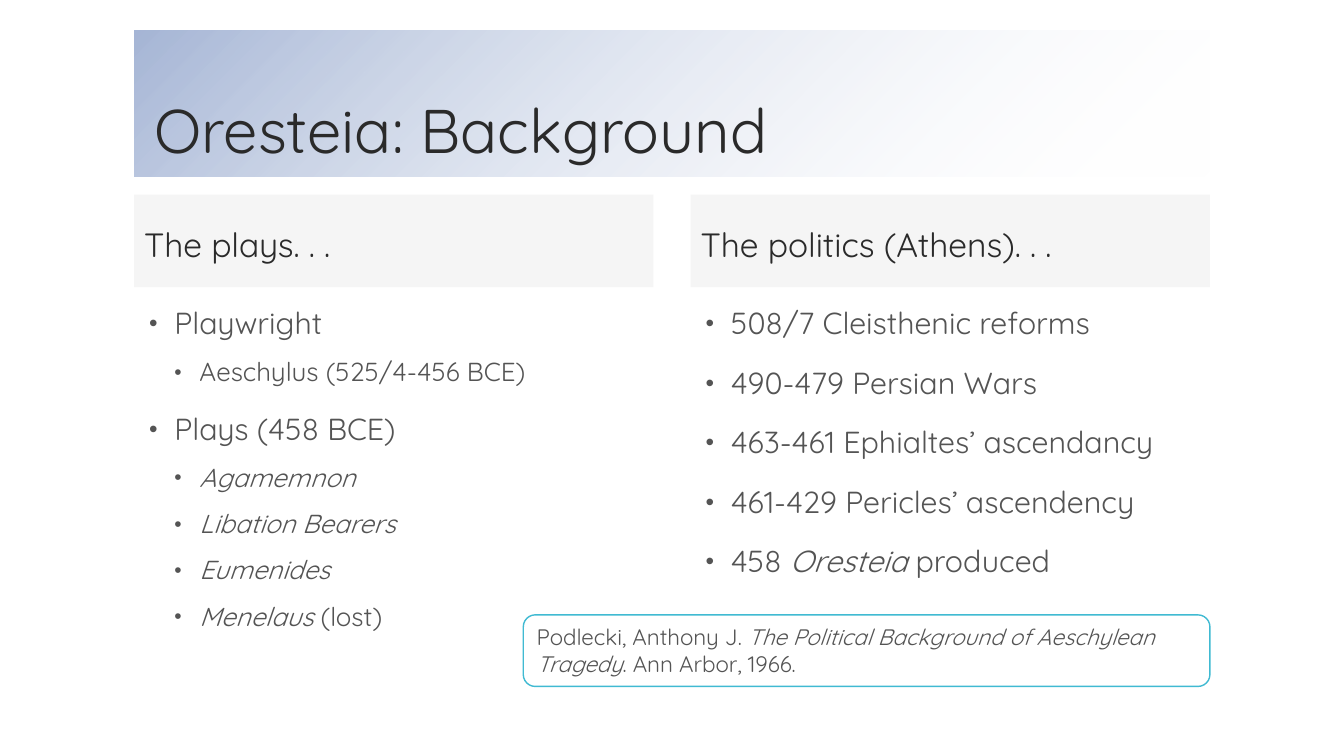
from dataclasses import dataclass
from typing import Any

import lxml.etree
import pptx
import pptx.dml.color
import pptx.enum.shapes
import pptx.enum.text
import pptx.oxml.ns
import pptx.util

Inches = pptx.util.Inches
Pt = pptx.util.Pt
RGBColor = pptx.dml.color.RGBColor
Anchor = pptx.enum.text.MSO_ANCHOR
ShapeKind = pptx.enum.shapes.MSO_SHAPE

BLUE = RGBColor(0xA6, 0xB6, 0xD6)
WHITE = RGBColor(0xFF, 0xFF, 0xFF)
GREY = RGBColor(0xBF, 0xBF, 0xBF)
TEAL = RGBColor(0x40, 0xBA, 0xD2)
DARK = RGBColor(0x2A, 0x2A, 0x2A)
BODY = RGBColor(0x54, 0x54, 0x54)

FONT = "Quicksand"
LEFT, WIDTH = 1.33, 10.67
COLUMN_WIDTH = 5.15
COLUMN_STEP = 5.52


@dataclass(frozen=True)
class Style:
    size: float
    color: RGBColor
    paragraph_format: dict[str, Any]
    indent: float = 0  # a bullet is drawn when this is above zero


@dataclass(frozen=True)
class Column:
    heading: str
    items: list[tuple[int, str]]  # level and text, *italic* between asterisks


TITLE = Style(44, DARK, {"line_spacing": 0.9})
HEADING = Style(24, DARK, {"line_spacing": 1.14})
CITATION = Style(16, BODY, {})
LEVELS = [
    Style(21.7, BODY, {"level": 0, "line_spacing": 0.94, "space_before": Pt(18)}, 0.3),
    Style(18.6, BODY, {"level": 1, "line_spacing": 0.94, "space_before": Pt(12)}, 0.55),
]

COLUMNS = [
    Column("The plays. . .", [
        (0, "Playwright"),
        (1, "Aeschylus (525/4-456 BCE)"),
        (0, "Plays (458 BCE)"),
        (1, "*Agamemnon*"),
        (1, "*Libation Bearers*"),
        (1, "*Eumenides*"),
        (1, "*Menelaus* (lost)"),
    ]),
    Column("The politics (Athens). . .", [
        (0, "508/7 Cleisthenic reforms"),
        (0, "490-479 Persian Wars"),
        (0, "463-461 Ephialtes’ ascendancy"),
        (0, "461-429 Pericles’ ascendency"),
        (0, "458 *Oresteia* produced"),
    ]),
]


def add_child(parent: Any, tag: str, **attributes: str) -> Any:
    return lxml.etree.SubElement(parent, pptx.oxml.ns.qn(tag), attributes)


def set_alpha(color_element: Any, percent: int) -> None:
    add_child(color_element, "a:alpha", val=str(percent * 1000))


def add_bullet(paragraph: Any, indent: float) -> None:
    properties = paragraph._p.get_or_add_pPr()
    properties.set("marL", str(Inches(indent)))
    properties.set("indent", str(Inches(-0.25)))
    add_child(add_child(properties, "a:buClr"), "a:srgbClr", val=str(BODY))
    add_child(properties, "a:buSzPct", val="80000")
    add_child(properties, "a:buFont", typeface="Arial")
    add_child(properties, "a:buChar", char="•")


def write(shape: Any, lines: list[tuple[Style, str]], **frame_format: Any) -> None:
    frame = shape.text_frame
    for name, value in ({"word_wrap": True} | frame_format).items():
        setattr(frame, name, value)
    for index, (style, text) in enumerate(lines):
        paragraph = frame.add_paragraph() if index else frame.paragraphs[0]
        paragraph.alignment = pptx.enum.text.PP_ALIGN.LEFT
        for name, value in style.paragraph_format.items():
            setattr(paragraph, name, value)
        if style.indent:
            add_bullet(paragraph, style.indent)
        for part, words in enumerate(text.split("*")):
            if not words:
                continue
            run = paragraph.add_run()
            run.text = words
            font_format = {"name": FONT, "size": Pt(style.size), "italic": part % 2 == 1}
            for name, value in font_format.items():
                setattr(run.font, name, value)
            run.font.color.rgb = style.color


def add_panel(slide: Any, kind: Any, left: float, top: float, width: float, height: float) -> Any:
    shape = slide.shapes.add_shape(kind, Inches(left), Inches(top), Inches(width), Inches(height))
    shape.shadow.inherit = False
    shape.line.fill.background()
    return shape


def add_title(slide: Any) -> None:
    banner = add_panel(slide, ShapeKind.RECTANGLE, LEFT, 0.3, WIDTH, 1.45)
    banner.fill.gradient()
    banner.fill.gradient_angle = 315
    for stop, color in zip(banner.fill.gradient_stops, (BLUE, WHITE)):
        stop.color.rgb = color
    colors = list(banner._element.spPr.iter(pptx.oxml.ns.qn("a:srgbClr")))
    set_alpha(colors[-1], 0)
    write(banner, [(TITLE, "Oresteia: Background")], vertical_anchor=Anchor.BOTTOM,
          margin_left=Inches(0.2), margin_right=Inches(0.2),
          margin_top=Inches(0.1), margin_bottom=Inches(0.1))


def add_column(slide: Any, column: Column, left: float) -> None:
    heading = add_panel(slide, ShapeKind.RECTANGLE, left, 1.93, COLUMN_WIDTH, 0.92)
    heading.fill.solid()
    heading.fill.fore_color.rgb = GREY
    set_alpha(heading._element.spPr.find(".//" + pptx.oxml.ns.qn("a:srgbClr")), 15)
    write(heading, [(HEADING, column.heading)], vertical_anchor=Anchor.MIDDLE)

    listing = slide.shapes.add_textbox(Inches(left), Inches(3), Inches(COLUMN_WIDTH), Inches(3.58))
    write(listing, [(LEVELS[level], text) for level, text in column.items])


def add_citation(slide: Any) -> None:
    box = add_panel(slide, ShapeKind.ROUNDED_RECTANGLE, 5.19, 6.1, 6.81, 0.71)
    box.fill.solid()
    box.fill.fore_color.rgb = WHITE
    box.line.color.rgb = TEAL
    box.line.width = Pt(1)
    text = "Podlecki, Anthony J. *The Political Background of Aeschylean Tragedy*. Ann Arbor, 1966."
    write(box, [(CITATION, text)], vertical_anchor=Anchor.TOP,
          auto_size=pptx.enum.text.MSO_AUTO_SIZE.SHAPE_TO_FIT_TEXT)


def main() -> None:
    presentation = pptx.Presentation()
    presentation.slide_width = Inches(13.33)
    presentation.slide_height = Inches(7.5)
    slide = presentation.slides.add_slide(presentation.slide_layouts[6])

    # Title banner
    add_title(slide)
    # Two columns with headings
    for index, column in enumerate(COLUMNS):
        add_column(slide, column, LEFT + index * COLUMN_STEP)
    # Source citation
    add_citation(slide)

    presentation.save("out.pptx")


if __name__ == "__main__":
    main()
